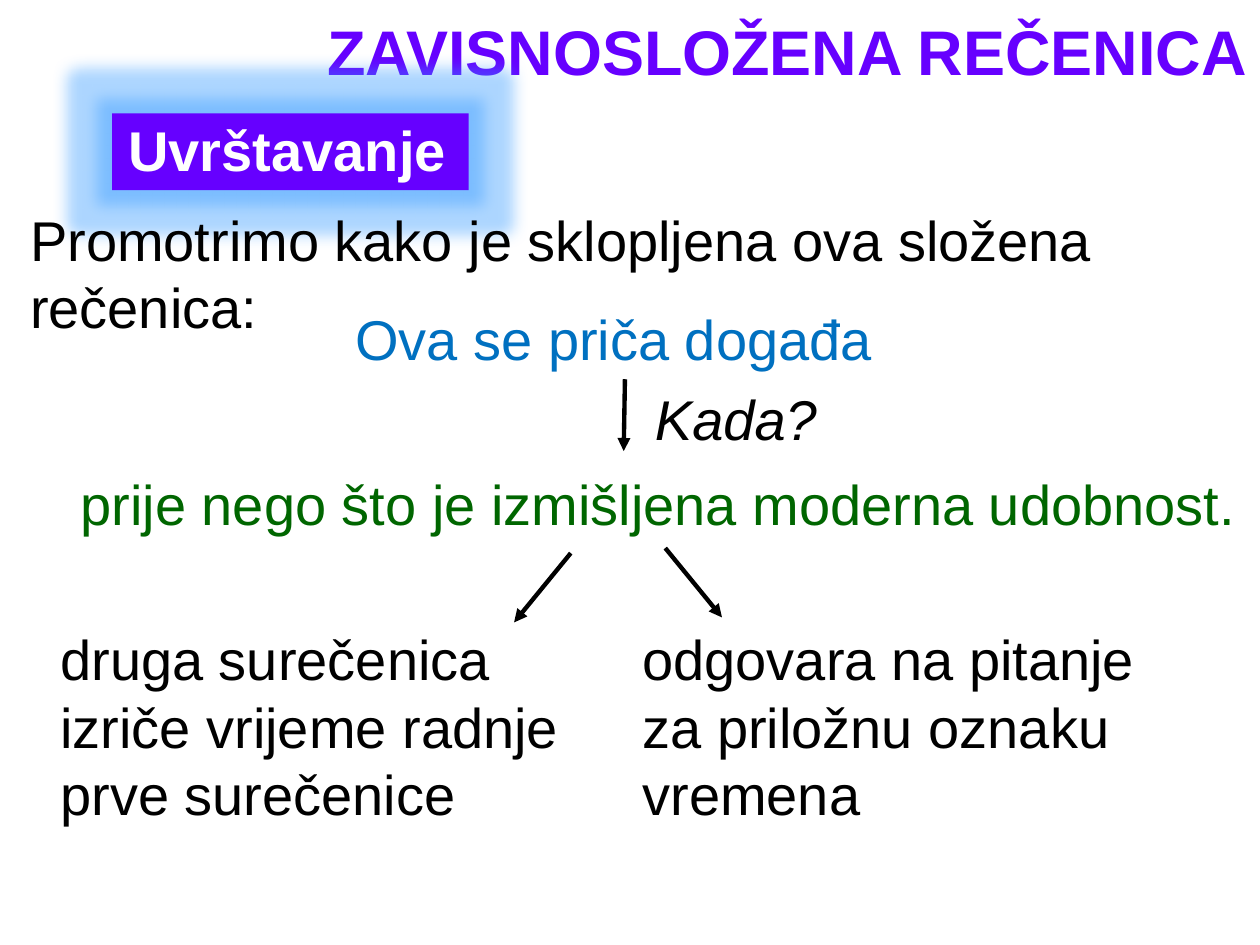
from lxml.etree import SubElement
from pptx import Presentation
from pptx.dml.color import RGBColor
from pptx.enum.shapes import MSO_CONNECTOR, MSO_SHAPE
from pptx.enum.text import MSO_ANCHOR, PP_ALIGN
from pptx.oxml.ns import qn
from pptx.util import Inches, Pt

BLACK, WHITE, VIOLET = "000000", "FFFFFF", "6600FF"
BLUE, GREEN, HALO = "0070C0", "006600", "3399FF"


def color(code):
    return RGBColor.from_string(code)


def add_text(slide, text, box, ink=BLACK, size=32, bold=False, italic=False,
             anchor=MSO_ANCHOR.TOP, wrap=True):
    """Add a one-paragraph text box and return its paragraph."""
    frame = slide.shapes.add_textbox(*map(Inches, box)).text_frame
    frame.word_wrap = wrap
    frame.vertical_anchor = anchor
    para = frame.paragraphs[0]
    para.text = text
    font = para.font
    font.name, font.size = "Arial", Pt(size)
    font.bold, font.italic = bold, italic
    font.color.rgb = color(ink)
    return para


def add_banner(slide, box, fill, halo):
    """Add a plain rectangle with a soft glow around it."""
    shape = slide.shapes.add_shape(MSO_SHAPE.RECTANGLE, *map(Inches, box))
    shape.fill.solid()
    shape.fill.fore_color.rgb = color(fill)
    shape.line.fill.background()
    shape.shadow.inherit = False
    effects = shape._element.spPr.find(qn("a:effectLst"))
    glow = SubElement(effects, qn("a:glow"), rad=str(Inches(0.24)))
    tint = SubElement(glow, qn("a:srgbClr"), val=halo)
    SubElement(tint, qn("a:alpha"), val="40000")


def add_arrow(slide, start, end):
    arrow = slide.shapes.add_connector(
        MSO_CONNECTOR.STRAIGHT, *map(Inches, start + end))
    arrow.line.color.rgb = color(BLACK)
    arrow.line.width = Pt(2.5)
    SubElement(arrow.line._get_or_add_ln(), qn("a:tailEnd"), type="triangle")
    SubElement(arrow._element.spPr, qn("a:effectLst"))


def main():
    deck = Presentation()
    deck.slide_width, deck.slide_height = Inches(10), Inches(7.5)
    slide = deck.slides.add_slide(deck.slide_layouts[6])

    title = add_text(slide, "ZAVISNOSLOŽENA REČENICA", (2.23, 0, 7.77, 0.76),
                     VIOLET, 36, bold=True, anchor=MSO_ANCHOR.BOTTOM)
    title.alignment = PP_ALIGN.RIGHT
    title.line_spacing = 0.9

    add_banner(slide, (0.89, 0.9, 2.83, 0.61), VIOLET, HALO)
    add_text(slide, "Uvrštavanje", (0.92, 0.66, 5.94, 0.84), WHITE,
             bold=True, anchor=MSO_ANCHOR.BOTTOM)

    add_text(slide, "Promotrimo kako je sklopljena ova složena rečenica:",
             (0.14, 1.58, 9.25, 1.18))
    add_text(slide, "Ova se priča događa", (2.72, 2.37, 4.48, 0.64), BLUE)
    add_text(slide, "Kada?", (5.1, 3, 1.5, 0.64), italic=True, wrap=False)
    add_text(slide, "prije nego što je izmišljena moderna udobnost.",
             (0.54, 3.68, 10.38, 0.64), GREEN)
    add_text(slide, "druga surečenica izriče vrijeme radnje prve surečenice",
             (0.38, 4.91, 4.59, 1.72))
    add_text(slide, "odgovara na pitanje za priložnu oznaku vremena",
             (5, 4.91, 4.61, 1.72))

    for start, end in (((4.96, 3.01), (4.95, 3.58)),
                       ((5.28, 4.35), (5.73, 4.9)),
                       ((4.53, 4.39), (4.08, 4.94))):
        add_arrow(slide, start, end)

    deck.save("out.pptx")


if __name__ == "__main__":
    main()
